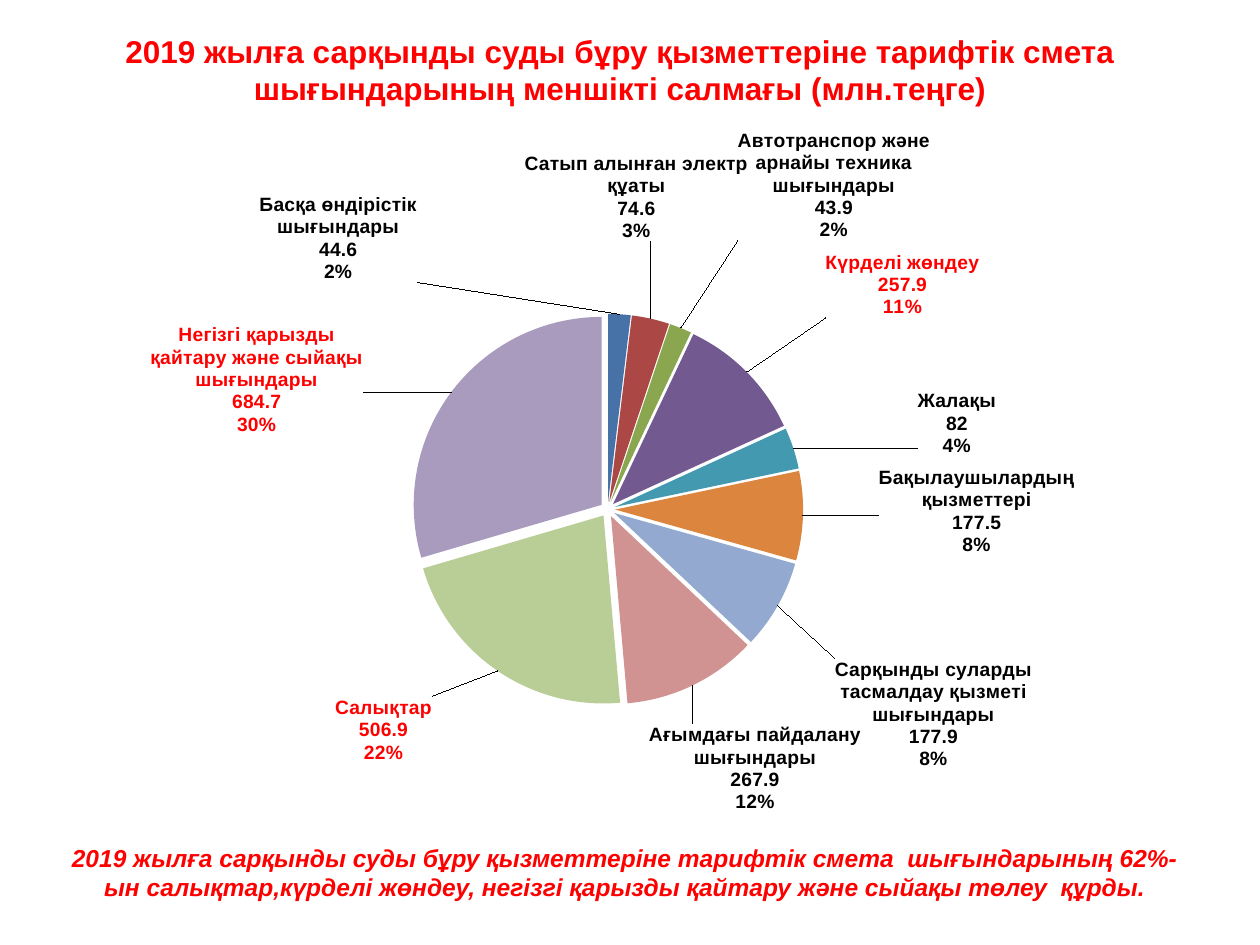
from lxml import etree
from pptx import Presentation
from pptx import util as u
from pptx.chart import data
from pptx.dml import color
from pptx.enum import chart as kinds, text
from pptx.oxml import ns

COLORS = {"red": "FF0000", "black": "000000"}
CHART_BOX = (16, 65, 677.5, 413)
PLOT = {"x": 0.209, "y": 0.277, "w": 0.56, "h": 0.541}
EXPLOSION = 4
TITLE = ("2019 жылға сарқынды суды бұру қызметтеріне тарифтік смета "
         "шығындарының меншікті салмағы (млн.теңге)")
SUMMARY = ("2019 жылға сарқынды суды бұру қызметтеріне тарифтік смета  "
           "шығындарының 62%-ын салықтар,күрделі жөндеу, негізгі қарызды "
           "қайтару және сыйақы төлеу  құрды.")

# name, amount, slice fill, label colour, label shift in points
EXPENSES = [
    ("Басқа өндірістік шығындары", 44.6, "4672A8", "black", (-161, -14)),
    ("Сатып алынған электр құаты", 74.6, "AB4744", "black", (-73, -40)),
    ("Автотранспор және арнайы техника шығындары", 43.9, "8AA64F", "black", (31, -46)),
    ("Күрделі жөндеу", 257.9, "725990", "red", (42, -28)),
    ("Жалақы", 82, "4299B0", "black", (67, 6)),
    ("Бақылаушылардың қызметтері", 177.5, "DC853E", "black", (39, -3)),
    ("Сарқынды суларды тасмалдау қызметі шығындары", 177.9, "93A9CF", "black", (29, 28)),
    ("Ағымдағы пайдалану шығындары", 267.9, "D09392", "black", (-27, 18)),
    ("Салықтар", 506.9, "B9CD96", "red", (-35, 11)),
    ("Негізгі қарызды қайтару және сыйақы шығындары", 684.7, "A99BBE", "red", (-47, 27)),
]


def set_font(font, hex_color, **values):
    for name, value in {"name": "Arial", "bold": True, **values}.items():
        setattr(font, name, value)
    font.color.rgb = color.RGBColor.from_string(hex_color)


def add_text(page, area, content, **font_values):
    box = page.shapes.add_textbox(*map(u.Pt, area))
    box.text_frame.word_wrap = True
    para = box.text_frame.paragraphs[0]
    para.alignment = text.PP_ALIGN.CENTER
    span = para.add_run()
    span.text = content
    set_font(span.font, COLORS["red"], **font_values)


def make_layout(values, target=None):
    layout = etree.Element(ns.qn("c:layout"))
    manual = etree.SubElement(layout, ns.qn("c:manualLayout"))
    if target:
        etree.SubElement(manual, ns.qn("c:layoutTarget"), val=target)
        for axis in ("xMode", "yMode"):
            etree.SubElement(manual, ns.qn(f"c:{axis}"), val="edge")
    for name, value in values.items():
        etree.SubElement(manual, ns.qn(f"c:{name}"), val=str(value))
    return layout


def style_label(label, hex_color, shift):
    set_font(label.font, hex_color, size=u.Pt(11))
    label.position = kinds.XL_LABEL_POSITION.OUTSIDE_END
    node = label._get_or_add_dLbl()
    for name in ("showVal", "showCatName", "showPercent"):
        node.find(ns.qn(f"c:{name}")).set("val", "1")
    etree.SubElement(node, ns.qn("c:separator")).text = "\n"
    offsets = {"x": round(shift[0] / CHART_BOX[2], 4),
               "y": round(shift[1] / CHART_BOX[3], 4)}
    node.find(ns.qn("c:idx")).addnext(make_layout(offsets))


def add_expense_pie(page):
    figures = data.CategoryChartData()
    figures.categories = [expense[0] for expense in EXPENSES]
    figures.add_series("Series 1", [expense[1] for expense in EXPENSES])
    pie = page.shapes.add_chart(
        kinds.XL_CHART_TYPE.PIE, *map(u.Pt, CHART_BOX), figures).chart
    pie.has_title = False
    pie.has_legend = False
    set_font(pie.font, COLORS["black"], name="Calibri", size=u.Pt(18), bold=False)

    area = pie.plots[0]
    area.vary_by_categories = True
    plot_node = pie._chartSpace.chart.plotArea
    for old in plot_node.findall(ns.qn("c:layout")):
        plot_node.remove(old)
    plot_node.insert(0, make_layout(PLOT, "inner"))

    series = area.series[0]
    explosion = etree.Element(ns.qn("c:explosion"), val=str(EXPLOSION))
    series._element.find(ns.qn("c:tx")).addnext(explosion)
    for index, (_, _, fill, label_color, shift) in enumerate(EXPENSES):
        point = series.points[index]
        point.format.fill.solid()
        point.format.fill.fore_color.rgb = color.RGBColor.from_string(fill)
        point.format.line.fill.background()
        style_label(point.data_label, COLORS[label_color], shift)

    labels = series.data_labels
    set_font(labels.font, COLORS["black"], size=u.Pt(11))
    for name in ("show_value", "show_category_name", "show_percentage"):
        setattr(labels, name, True)


def main():
    deck = Presentation()
    deck.slide_width, deck.slide_height = u.Pt(720), u.Pt(540)
    page = deck.slides.add_slide(deck.slide_layouts[6])
    add_expense_pie(page)
    add_text(page, (31, 14.5, 646.5, 72.5), TITLE, size=u.Pt(18))
    add_text(page, (25, 478, 664.5, 41), SUMMARY, size=u.Pt(14), italic=True)
    deck.save("out.pptx")


if __name__ == "__main__":
    main()
